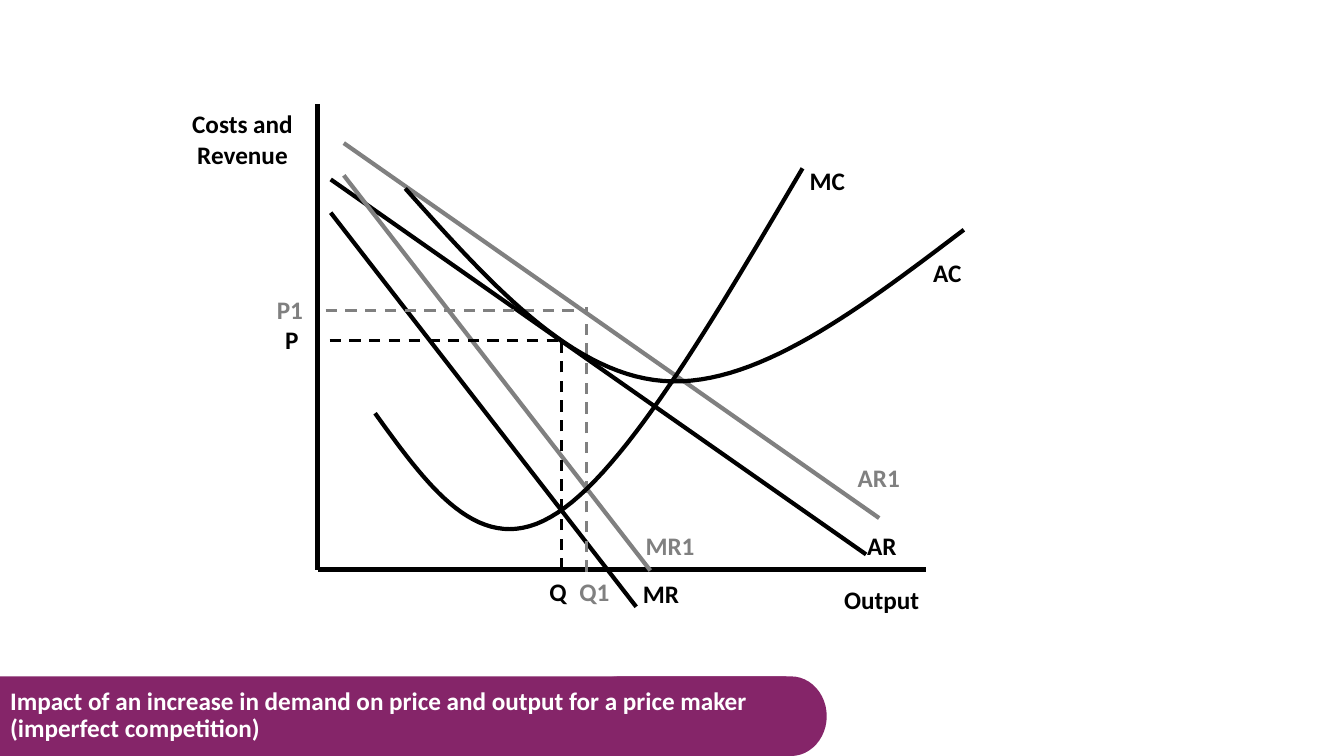
from lxml import etree
from pptx import Presentation
from pptx.dml.color import RGBColor
from pptx.enum import dml, shapes, text
from pptx.oxml import ns
from pptx.util import Inches, Pt

BLACK, GREY, PLUM, WHITE = "000000", "808080", "852569", "FFFFFF"


def ink(fmt, color):
    """Give a fill or a line one solid colour."""
    fmt.solid()
    fmt.fore_color.rgb = RGBColor.from_string(color)


def write(par, words, color):
    run = par.add_run()
    run.text = words
    run.font.name = "Calibri"
    run.font.size = Pt(18)
    run.font.bold = True
    ink(run.font.fill, color)


deck = Presentation()
deck.slide_width, deck.slide_height = Inches(13.33), Inches(7.5)
slide = deck.slides.add_slide(deck.slide_layouts[5])
items = slide.shapes

# Banner
for kind, left, width in [
    (shapes.MSO_SHAPE.RECTANGLE, 0, 7.8),
    (shapes.MSO_SHAPE.FLOWCHART_STORED_DATA, 6.07, 2.13),
]:
    part = items.add_shape(kind, Inches(left), Inches(6.71), Inches(width), Inches(0.79))
    part.shadow.inherit = False
    ink(part.fill, PLUM)
    part.line.fill.background()
part._element.spPr.xfrm.set("flipH", "1")  # round end to the right

# Axes, demand lines and dashed guides
for x1, y1, x2, y2, color, weight in [
    (3.15, 1.03, 3.15, 5.65, BLACK, 3),
    (3.15, 5.65, 9.18, 5.65, BLACK, 3),
    (3.28, 1.78, 8.59, 5.5, BLACK, 3),
    (3.28, 2.11, 6.31, 6.02, BLACK, 3),
    (3.41, 1.42, 8.72, 5.14, GREY, 3),
    (3.41, 1.74, 6.45, 5.66, GREY, 3),
    (5.57, 5.65, 5.57, 3.34, BLACK, 2),
    (3.27, 3.38, 5.59, 3.38, BLACK, 2),
    (5.82, 5.67, 5.82, 3.05, GREY, 2),
    (3.23, 3.08, 5.81, 3.08, GREY, 2),
]:
    line = items.add_connector(
        shapes.MSO_CONNECTOR.STRAIGHT, Inches(x1), Inches(y1), Inches(x2), Inches(y2)
    )
    ink(line.line.fill, color)
    line.line.width = Pt(weight)
    if weight == 2:
        line.line.dash_style = dml.MSO_LINE.DASH
    etree.SubElement(line._element.spPr, ns.qn("a:effectLst"))

# Cost curves: each is two cubic Bezier arcs that share a point
STEPS = 30
for knots in [
    [(4.02, 1.87), (4.84, 2.79), (5.66, 3.71), (6.58, 3.78),
     (7.5, 3.85), (8.53, 3.06), (9.56, 2.28)],
    [(3.72, 4.1), (4.24, 4.82), (4.75, 5.54), (5.46, 5.13),
     (6.17, 4.73), (7.06, 3.2), (7.96, 1.67)],
]:
    dots = []
    for first in (0, 3):
        arc = knots[first:first + 4]
        for step in range(1, STEPS + 1):
            t = step / STEPS
            mix = ((1 - t) ** 3, 3 * t * (1 - t) ** 2, 3 * t ** 2 * (1 - t), t ** 3)
            dots.append([Inches(sum(m * k[axis] for m, k in zip(mix, arc))) for axis in (0, 1)])
    x, y = knots[0]
    pen = items.build_freeform(Inches(x), Inches(y))
    pen.add_line_segments(dots, close=False)
    curve = pen.convert_to_shape()
    curve.shadow.inherit = False
    curve.fill.background()
    ink(curve.line.fill, BLACK)
    curve.line.width = Pt(3)

# Labels
for words, left, top, color in [
    ("Costs and Revenue", 1.78, 1.03, BLACK),
    ("Output", 8.12, 5.75, BLACK),
    ("MC", 7.58, 1.59, BLACK),
    ("AC", 8.77, 2.5, BLACK),
    ("AR", 8.12, 5.21, BLACK),
    ("MR", 5.93, 5.69, BLACK),
    ("AR1", 8.09, 4.54, GREY),
    ("MR1", 6.02, 5.21, GREY),
    ("Q", 4.91, 5.67, BLACK),
    ("P", 2.27, 3.17, BLACK),
    ("P1", 2.25, 2.87, GREY),
    ("Q1", 5.27, 5.67, GREY),
]:
    high = 0.71 if " " in words else 0.4
    frame = items.add_textbox(Inches(left), Inches(top), Inches(1.25), Inches(high)).text_frame
    frame.word_wrap = True
    frame.auto_size = text.MSO_AUTO_SIZE.SHAPE_TO_FIT_TEXT
    frame.paragraphs[0].alignment = text.PP_ALIGN.CENTER
    write(frame.paragraphs[0], words, color)

# Title, brought in front of the banner
title = items.title
title.left, title.top = Inches(0), Inches(6.71)
title.width, title.height = Inches(7.87), Inches(0.79)
frame = title.text_frame
frame.word_wrap = True
frame.auto_size = text.MSO_AUTO_SIZE.NONE
frame.vertical_anchor = text.MSO_ANCHOR.MIDDLE
par = frame.paragraphs[0]
par.alignment = text.PP_ALIGN.LEFT
par.line_spacing = 0.9
write(par, "Impact of an increase in demand on price and output for a price maker "
      "(imperfect competition)", WHITE)
items._spTree.append(title._element)

deck.save("out.pptx")
